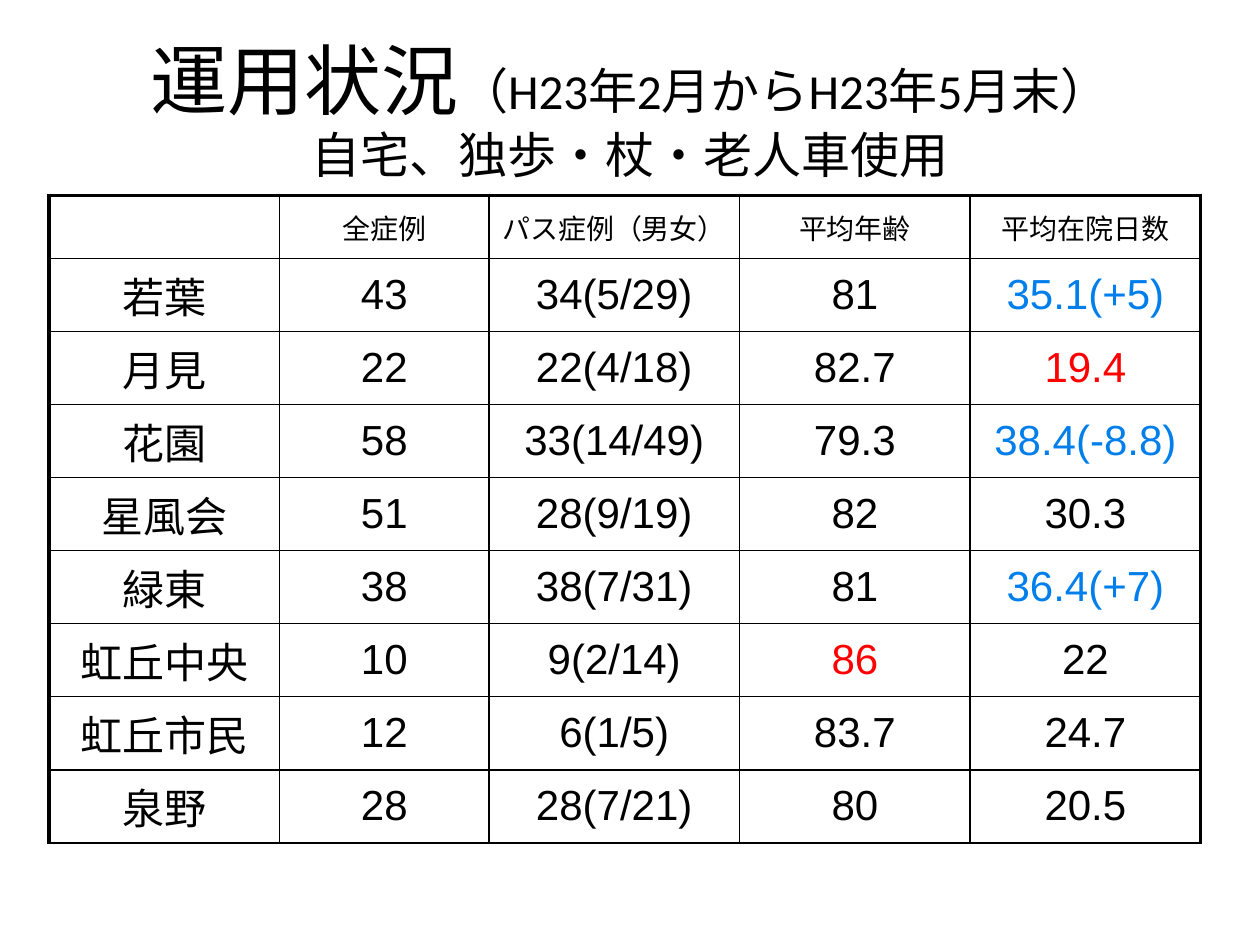
"""Builds the slide on clinical pathway use, one table row per hospital."""
from dataclasses import dataclass

from lxml.etree import SubElement
from pptx import Presentation
from pptx.dml.color import RGBColor
from pptx.enum.text import MSO_ANCHOR, PP_ALIGN
from pptx.oxml.ns import qn
from pptx.util import Inches, Pt

BLACK, BLUE, RED = "000000", "007EEB", "FF0000"
THIN, THICK = 1, 2.25
COLUMN_WIDTHS = (1.83, 1.66, 1.99, 1.83, 1.83)
HEADER_HEIGHT, BODY_HEIGHT = 0.5, 0.58
HEADINGS = ("", "全症例", "パス症例（男女）", "平均年齢", "平均在院日数")


@dataclass(frozen=True)
class Hospital:
    """Figures of one hospital, with the colours of its age and stay."""
    name: str
    cases: str
    pathway_cases: str
    mean_age: str
    mean_stay: str
    age_color: str = BLACK
    stay_color: str = BLACK

    def entries(self) -> list[tuple[str, str]]:
        """Return the text and colour of each column."""
        return [
            (self.name, BLACK),
            (self.cases, BLACK),
            (self.pathway_cases, BLACK),
            (self.mean_age, self.age_color),
            (self.mean_stay, self.stay_color),
        ]


HOSPITALS = (
    Hospital("若葉", "43", "34(5/29)", "81", "35.1(+5)", stay_color=BLUE),
    Hospital("月見", "22", "22(4/18)", "82.7", "19.4", stay_color=RED),
    Hospital("花園", "58", "33(14/49)", "79.3", "38.4(-8.8)", stay_color=BLUE),
    Hospital("星風会", "51", "28(9/19)", "82", "30.3"),
    Hospital("緑東", "38", "38(7/31)", "81", "36.4(+7)", stay_color=BLUE),
    Hospital("虹丘中央", "10", "9(2/14)", "86", "22", age_color=RED),
    Hospital("虹丘市民", "12", "6(1/5)", "83.7", "24.7"),
    Hospital("泉野", "28", "28(7/21)", "80", "20.5"),
)


def add_run(paragraph, text: str, size: float, font: str, color: str = BLACK) -> None:
    """Add one formatted run to a paragraph."""
    run = paragraph.add_run()
    run.text = text
    run.font.size = Pt(size)
    run.font.name = font
    run.font.bold = False
    run.font.color.rgb = RGBColor.from_string(color)


def add_title(slide) -> None:
    """Add the two-line centred title."""
    box = slide.shapes.add_textbox(Inches(0.5), Inches(0.23), Inches(9), Inches(1.25))
    frame = box.text_frame
    frame.word_wrap = True
    frame.vertical_anchor = MSO_ANCHOR.MIDDLE
    paragraph = frame.paragraphs[0]
    paragraph.alignment = PP_ALIGN.CENTER
    add_run(paragraph, "運用状況", 44, "Calibri")
    add_run(paragraph, "（H23年2月からH23年5月末）", 28, "Calibri")
    paragraph.add_line_break()
    add_run(paragraph, "自宅、独歩・杖・老人車使用", 28, "Calibri")


def set_borders(cell, widths: dict[str, float]) -> None:
    """Draw black cell borders of the given point widths."""
    properties = cell._tc.get_or_add_tcPr()
    for side, width in widths.items():
        line = SubElement(properties, qn(f"a:ln{side}"), w=str(Pt(width)))
        fill = SubElement(line, qn("a:solidFill"))
        SubElement(fill, qn("a:srgbClr"), val=BLACK)


def fill_cell(cell, text: str, size: float, color: str) -> None:
    """Write centred text into an unfilled cell."""
    cell.fill.background()
    cell.vertical_anchor = MSO_ANCHOR.MIDDLE
    paragraph = cell.text_frame.paragraphs[0]
    paragraph.alignment = PP_ALIGN.CENTER
    spacing = SubElement(paragraph._p.get_or_add_pPr(), qn("a:spcBef"))
    SubElement(spacing, qn("a:spcPct"), val="20000")
    if text:
        add_run(paragraph, text, size, "Arial", color)


def add_results(slide) -> None:
    """Add the table of results with a thick left, top and right edge."""
    rows = [[(heading, BLACK) for heading in HEADINGS]]
    rows += [hospital.entries() for hospital in HOSPITALS]
    table = slide.shapes.add_table(
        len(rows), len(HEADINGS), Inches(0.39), Inches(1.55),
        Inches(sum(COLUMN_WIDTHS)),
        Inches(HEADER_HEIGHT + BODY_HEIGHT * len(HOSPITALS)),
    ).table
    table.first_row = table.horz_banding = False
    for column, width in zip(table.columns, COLUMN_WIDTHS):
        column.width = Inches(width)
    last_column = len(HEADINGS) - 1
    for row_index, entries in enumerate(rows):
        is_header = row_index == 0
        table.rows[row_index].height = Inches(HEADER_HEIGHT if is_header else BODY_HEIGHT)
        for column_index, (text, color) in enumerate(entries):
            cell = table.cell(row_index, column_index)
            set_borders(cell, {
                "L": THICK if column_index == 0 else THIN,
                "R": THICK if column_index == last_column else THIN,
                "T": THICK if is_header else THIN,
                "B": THIN,
            })
            fill_cell(cell, text, 16 if is_header else 24, color)


def main() -> None:
    """Build and save the presentation."""
    presentation = Presentation()
    presentation.slide_width = Inches(10)
    presentation.slide_height = Inches(7.5)
    slide = presentation.slides.add_slide(presentation.slide_layouts[6])
    add_title(slide)
    add_results(slide)
    presentation.save("out.pptx")


if __name__ == "__main__":
    main()
